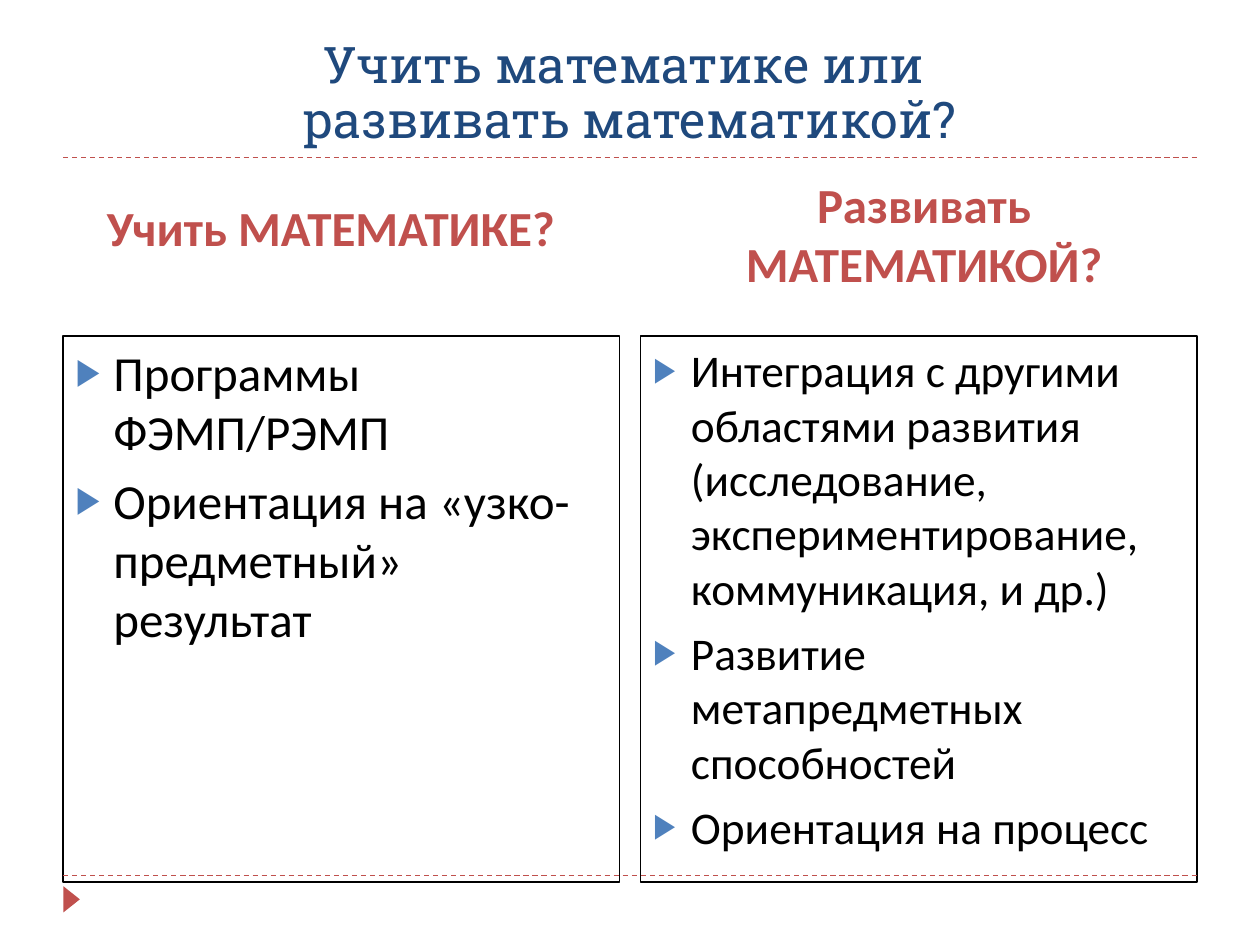
"""Build a two-column comparison slide about teaching mathematics."""
from lxml import etree
from pptx import Presentation
from pptx.dml.color import RGBColor
from pptx.enum import dml, shapes, text
from pptx.oxml import ns
from pptx.util import Pt

NAVY = RGBColor(0x1F, 0x49, 0x7D)
RED = RGBColor(0xC0, 0x50, 0x4D)
BLUE = RGBColor(0x4F, 0x81, 0xBD)
BLACK = RGBColor(0, 0, 0)


class ComparisonSlide:
    """Hold the slide and its style, and draw each kind of element."""

    title_font = "Roboto Slab"
    body_font = "Calibri"
    thin = Pt(0.75)
    indent = Pt(21.6)

    def __init__(self, presentation):
        """Add a slide with the comparison layout."""
        self.slide = presentation.slides.add_slide(presentation.slide_layouts[4])

    def place(self, index, box, lines, anchor):
        """Move a placeholder, write its paragraphs and return it."""
        shape = self.slide.placeholders[index]
        shape.left, shape.top, shape.width, shape.height = map(Pt, box)
        frame = shape.text_frame
        frame.text = "\n".join(lines)
        frame.word_wrap = True
        frame.auto_size = text.MSO_AUTO_SIZE.NONE
        frame.vertical_anchor = anchor
        return shape

    def style(self, paragraph, font, size, color, bold=False):
        """Set the font of a whole paragraph."""
        paragraph.font.name = font
        paragraph.font.size = Pt(size)
        paragraph.font.color.rgb = color
        paragraph.font.bold = bold

    def title(self, box, words):
        """Write the slide title."""
        shape = self.place(0, box, [words], text.MSO_ANCHOR.MIDDLE)
        paragraph = shape.text_frame.paragraphs[0]
        paragraph.alignment = text.PP_ALIGN.CENTER
        paragraph.line_spacing = 0.9
        self.style(paragraph, self.title_font, 28.8, NAVY)

    def heading(self, index, box, words):
        """Write a column heading."""
        shape = self.place(index, box, [words], text.MSO_ANCHOR.BOTTOM)
        paragraph = shape.text_frame.paragraphs[0]
        paragraph.alignment = text.PP_ALIGN.CENTER
        paragraph.space_before = Pt(6)
        self.style(paragraph, self.body_font, 28, RED, bold=True)

    def bullets(self, index, box, size, lines):
        """Write a framed bullet list."""
        shape = self.place(index, box, lines, text.MSO_ANCHOR.TOP)
        shape.line.color.rgb = BLACK
        shape.line.width = self.thin
        for paragraph in shape.text_frame.paragraphs:
            paragraph.space_before = Pt(6)
            self.bullet(paragraph)
            self.style(paragraph, self.body_font, size, BLACK)

    def bullet(self, paragraph):
        """Give a paragraph a hanging triangle bullet."""
        properties = paragraph._p.get_or_add_pPr()
        properties.set("marL", str(self.indent))
        properties.set("indent", str(-self.indent))
        color = etree.SubElement(properties, ns.qn("a:buClr"))
        etree.SubElement(color, ns.qn("a:srgbClr"), val=str(BLUE))
        etree.SubElement(properties, ns.qn("a:buSzPct"), val="76000")
        etree.SubElement(properties, ns.qn("a:buChar"), char="▶")

    def rule(self, left, right, top):
        """Draw a dashed horizontal rule."""
        line = self.slide.shapes.add_connector(
            shapes.MSO_CONNECTOR.STRAIGHT, Pt(left), Pt(top), Pt(right), Pt(top))
        line.line.color.rgb = RED
        line.line.width = self.thin
        line.line.dash_style = dml.MSO_LINE.DASH
        etree.SubElement(line._element.spPr, ns.qn("a:effectLst"))

    def marker(self, left, top, width, height):
        """Draw the triangle that points right in the footer."""
        shape = self.slide.shapes.add_shape(
            shapes.MSO_SHAPE.ISOSCELES_TRIANGLE, Pt(left), Pt(top), Pt(width), Pt(height))
        shape.rotation = 90
        shape.shadow.inherit = False
        shape.fill.solid()
        shape.fill.fore_color.rgb = RED
        shape.line.fill.background()


def main():
    """Build and save the presentation."""
    presentation = Presentation()
    presentation.slide_width, presentation.slide_height = Pt(720), Pt(540)
    page = ComparisonSlide(presentation)
    for top in (500.4, 90):
        page.rule(36, 684, top)
    page.marker(33.4, 509.2, 15, 9.4)
    page.title((36, 18, 648, 72), "Учить математике или \vразвивать математикой?")
    page.heading(1, (30, 132, 318, 18), "Учить МАТЕМАТИКЕ?")
    page.heading(3, (360, 120, 336, 50.4), "Развивать МАТЕМАТИКОЙ?")
    page.bullets(2, (36, 192, 318, 312), 28, [
        "Программы ФЭМП/РЭМП",
        "Ориентация на «узко-предметный» результат",
    ])
    page.bullets(4, (366, 192, 318, 312), 25.9, [
        "Интеграция с другими областями развития (исследование, "
        "экспериментирование, коммуникация, и др.)",
        "Развитие метапредметных способностей",
        "Ориентация на процесс",
    ])
    presentation.save("out.pptx")


if __name__ == "__main__":
    main()
